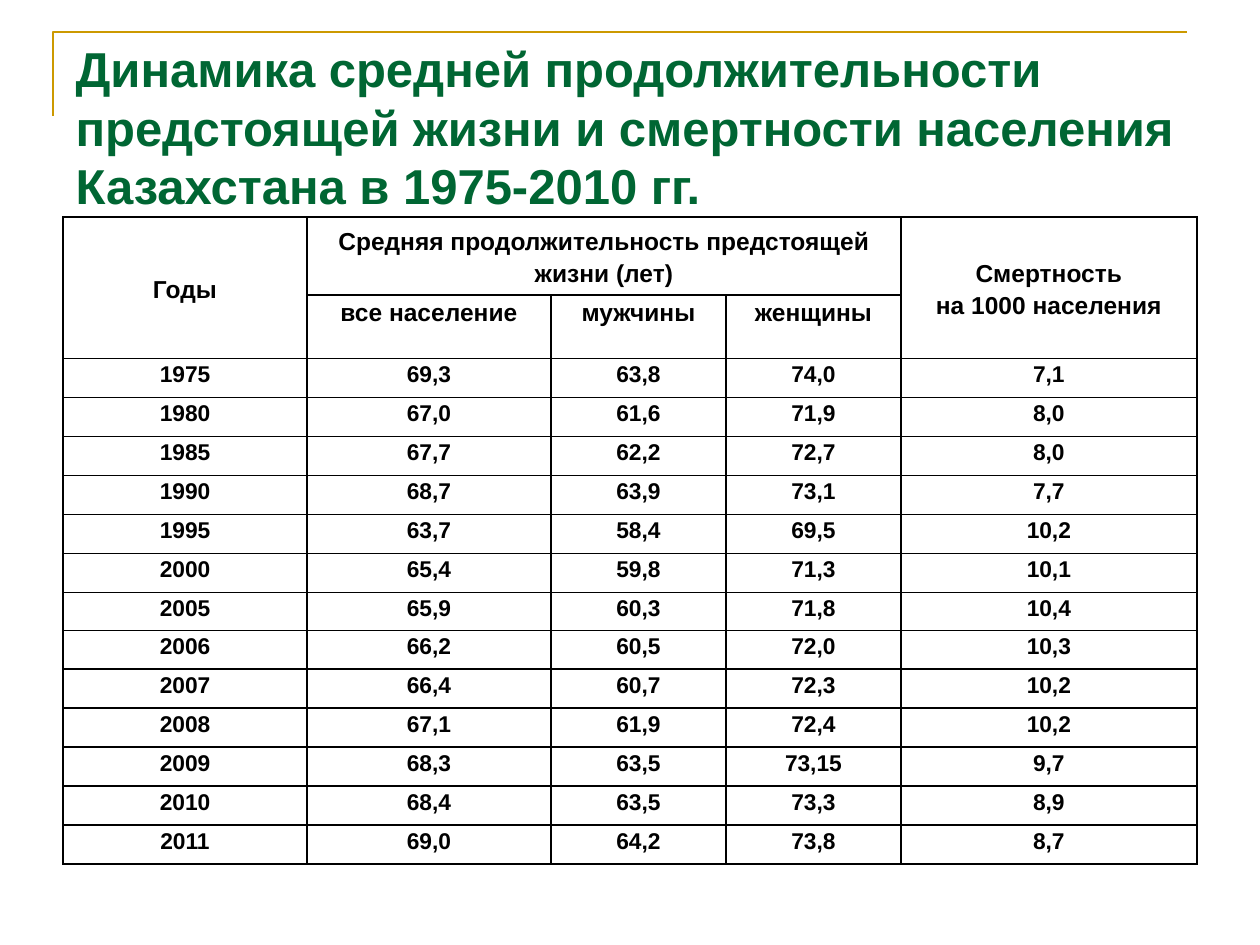
from lxml import etree
from pptx import Presentation
from pptx import util as u
from pptx.dml.color import RGBColor
from pptx.enum import text
from pptx.oxml.ns import qn

PX = u.Inches(1) // 126
FONT = "Arial"
GREEN = RGBColor(0x00, 0x66, 0x33)
GOLD = RGBColor(0xCC, 0x99, 0x00)
BLACK = RGBColor(0x00, 0x00, 0x00)
WHITE = RGBColor(0xFF, 0xFF, 0xFF)

# Content
TITLE = ("Динамика средней продолжительности предстоящей жизни "
         "и смертности населения Казахстана в 1975-2010 гг.")
HEADERS = [
    ["Годы", "Средняя продолжительность предстоящей жизни (лет)", "", "",
     "Смертность\nна 1000 населения"],
    ["", "все население", "мужчины", "женщины", ""],
]
DATA = [
    ["1975", "69,3", "63,8", "74,0", "7,1"],
    ["1980", "67,0", "61,6", "71,9", "8,0"],
    ["1985", "67,7", "62,2", "72,7", "8,0"],
    ["1990", "68,7", "63,9", "73,1", "7,7"],
    ["1995", "63,7", "58,4", "69,5", "10,2"],
    ["2000", "65,4", "59,8", "71,3", "10,1"],
    ["2005", "65,9", "60,3", "71,8", "10,4"],
    ["2006", "66,2", "60,5", "72,0", "10,3"],
    ["2007", "66,4", "60,7", "72,3", "10,2"],
    ["2008", "67,1", "61,9", "72,4", "10,2"],
    ["2009", "68,3", "63,5", "73,15", "9,7"],
    ["2010", "68,4", "63,5", "73,3", "8,9"],
    ["2011", "69,0", "64,2", "73,8", "8,7"],
]
MERGES = [((0, 0), (1, 0)), ((0, 1), (0, 3)), ((0, 4), (1, 4))]

# Layout, in px
TITLE_BOX = (63, 32, 1134, 163)
FRAME = [(53, 116), (53, 32), (1187, 32)]
TABLE_LEFT, TABLE_TOP = 63, 217
COLUMNS = [244, 244, 175, 175, 296]
HEADER_ROWS = [78, 63]
DATA_HEIGHT = 506


def add_run(paragraph, words, size, color):
    run = paragraph.add_run()
    run.text = words
    run.font.name = FONT
    run.font.size = u.Pt(size)
    run.font.bold = True
    run.font.color.rgb = color


def add_borders(cell):
    properties = cell._tc.get_or_add_tcPr()
    for place, side in enumerate(("lnL", "lnR", "lnT", "lnB")):
        line = etree.Element(qn(f"a:{side}"), w=str(u.Pt(1)))
        fill = etree.SubElement(line, qn("a:solidFill"))
        etree.SubElement(fill, qn("a:srgbClr"), val=str(BLACK))
        properties.insert(place, line)


def fill_cell(cell, words, size, anchor):
    cell.fill.solid()
    cell.fill.fore_color.rgb = WHITE
    cell.margin_left = cell.margin_right = 4 * PX
    cell.margin_top = cell.margin_bottom = 0
    cell.vertical_anchor = anchor
    add_borders(cell)
    if not words:
        return
    for number, line in enumerate(words.split("\n")):
        frame = cell.text_frame
        paragraph = frame.add_paragraph() if number else frame.paragraphs[0]
        paragraph.alignment = text.PP_ALIGN.CENTER
        paragraph.line_spacing = 1.15
        add_run(paragraph, line, size, BLACK)


def main():
    deck = Presentation()
    deck.slide_width, deck.slide_height = u.Inches(10), u.Inches(7.5)
    slide = deck.slides.add_slide(deck.slide_layouts[5])

    # Title
    title = slide.shapes.title
    title.left, title.top, title.width, title.height = (n * PX for n in TITLE_BOX)
    title.text_frame.word_wrap = True
    title.text_frame.auto_size = text.MSO_AUTO_SIZE.NONE
    title.text_frame.vertical_anchor = text.MSO_ANCHOR.TOP
    heading = title.text_frame.paragraphs[0]
    heading.alignment = text.PP_ALIGN.LEFT
    add_run(heading, TITLE, 28, GREEN)

    # Corner line around the title
    outline = slide.shapes.build_freeform(*FRAME[0], scale=PX)
    outline.add_line_segments(FRAME[1:], close=False)
    corner = outline.convert_to_shape()
    corner.shadow.inherit = False
    corner.fill.background()
    corner.line.color.rgb = GOLD
    corner.line.width = u.Pt(1.5)

    # Table: data rows share their height evenly
    edges = [round(DATA_HEIGHT * n / len(DATA)) for n in range(len(DATA) + 1)]
    heights = HEADER_ROWS + [low - high for high, low in zip(edges, edges[1:])]
    rows = HEADERS + DATA
    table = slide.shapes.add_table(
        len(rows), len(COLUMNS), TABLE_LEFT * PX, TABLE_TOP * PX,
        sum(COLUMNS) * PX, sum(heights) * PX).table
    table.first_row = table.horz_banding = False
    for column, width in zip(table.columns, COLUMNS):
        column.width = width * PX
    for row, height in zip(table.rows, heights):
        row.height = height * PX
    for start, end in MERGES:
        table.cell(*start).merge(table.cell(*end))
    merged = [start for start, _ in MERGES]
    for r, row in enumerate(rows):
        for c, words in enumerate(row):
            middle = (r, c) in merged
            fill_cell(table.cell(r, c), words, 14 if r < len(HEADERS) else 13,
                      text.MSO_ANCHOR.MIDDLE if middle else text.MSO_ANCHOR.TOP)

    deck.save("out.pptx")


if __name__ == "__main__":
    main()
